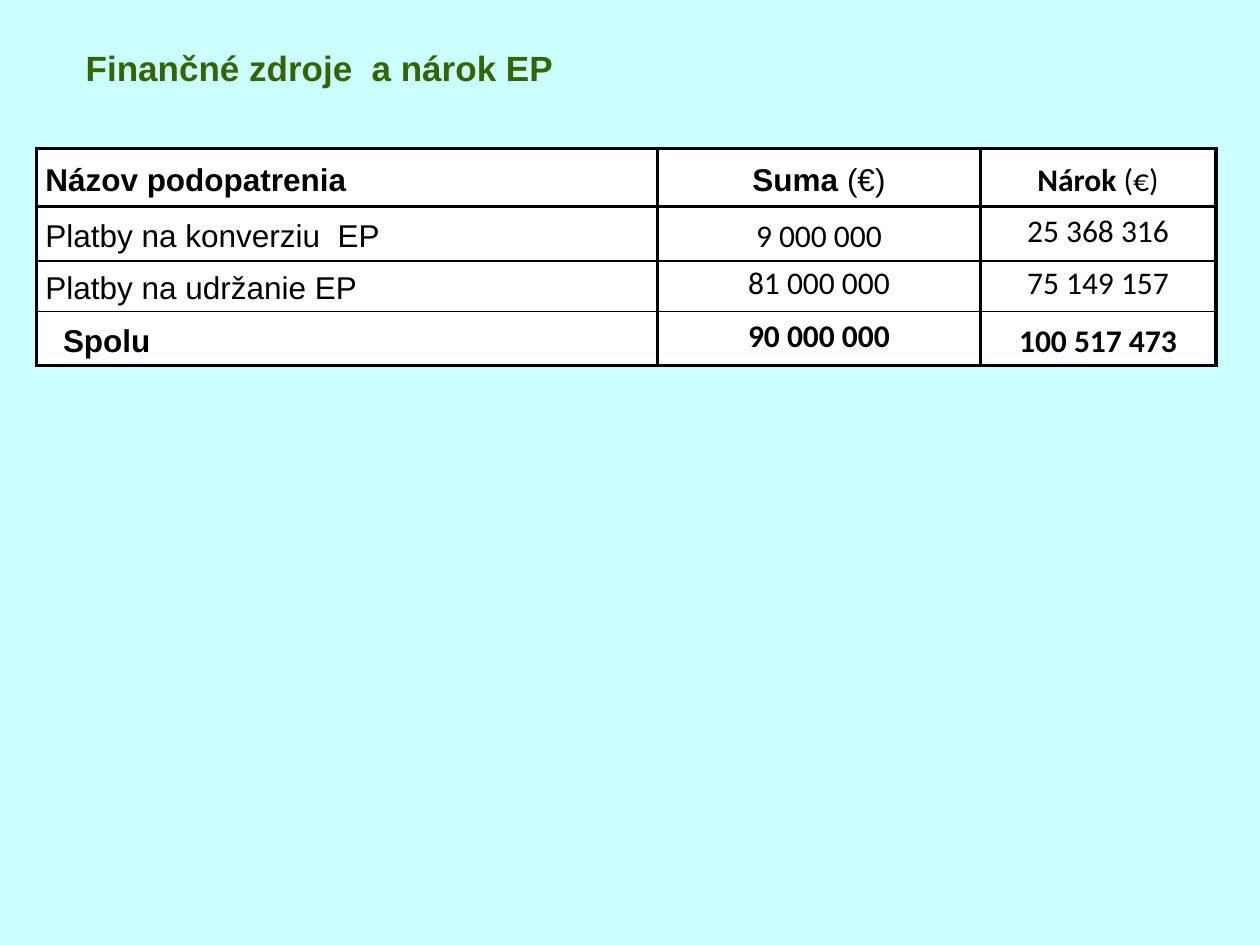
"""Build a slide with a table of payment funds and claims."""
import pptx
import pptx.util
import pptx.dml.color
import pptx.enum.text
import pptx.oxml.ns
import lxml.etree

Inches = pptx.util.Inches
Pt = pptx.util.Pt
ALIGN = pptx.enum.text.PP_ALIGN
MIDDLE = pptx.enum.text.MSO_ANCHOR.MIDDLE

TITLE = "Finančné zdroje  a nárok EP"
PLAIN = {"name": "Arial", "bold": False}
BOLD = {"name": "Arial", "bold": True}
NUM = {"name": "Calibri", "bold": False}
SUM = {"name": "Calibri", "bold": True}
ROWS = [
    [(1.15, [("Názov podopatrenia", BOLD)]),
     (1.15, [("Suma ", BOLD), ("(€)", PLAIN)]),
     (1.15, [("Nárok", SUM), (" (€)", NUM)])],
    [(1.15, [("Platby na konverziu  EP", PLAIN)]),
     (1.15, [("9 000 000", NUM)]),
     (0.75, [("25 368 316", NUM)])],
    [(1.15, [("Platby na udržanie EP", PLAIN)]),
     (0.75, [("81 000 000", NUM)]),
     (0.75, [("75 149 157", NUM)])],
    [(1.15, [("Spolu", BOLD)]),
     (0.75, [("90 000 000", SUM)]),
     (1.15, [("100 517 473", SUM)])],
]
WIDTHS = [4.93, 2.56, 1.87]
HEIGHTS = [0.46, 0.32, 0.32, 0.39]
RULES = [2.25, 2.25, 1, 1, 2.25]
INSET = {"margin_left": 0.07, "margin_right": 0.07,
         "margin_top": 0.04, "margin_bottom": 0.04}
INDENT = 0.14


def tint(text):
    return pptx.dml.color.RGBColor.from_string(text)


def style(font, form, size, color):
    for key, value in form.items():
        setattr(font, key, value)
    font.size = Pt(size)
    font.color.rgb = tint(color)


def border(cell, sides):
    props = cell._tc.get_or_add_tcPr()
    qn = pptx.oxml.ns.qn
    for spot, (side, width) in enumerate(sides.items()):
        line = lxml.etree.Element(qn("a:" + side), w=str(Pt(width)))
        fill = lxml.etree.SubElement(line, qn("a:solidFill"))
        lxml.etree.SubElement(fill, qn("a:srgbClr"), val="000000")
        props.insert(spot, line)


def head(slide):
    title = slide.shapes.title
    place = {"left": 0.58, "top": 0.24, "width": 9.02, "height": 0.67}
    for key, value in place.items():
        setattr(title, key, Inches(value))
    frame = title.text_frame
    frame.text = TITLE
    frame.vertical_anchor = MIDDLE
    para = frame.paragraphs[0]
    para.alignment = ALIGN.LEFT
    para.line_spacing = 0.75
    style(para.runs[0].font, BOLD, 20, "336600")


def fill(cell, row, col):
    space, runs = ROWS[row][col]
    cell.fill.solid()
    cell.fill.fore_color.rgb = tint("FFFFFF")
    cell.vertical_anchor = MIDDLE
    for key, value in INSET.items():
        setattr(cell, key, Inches(value))
    if row == len(ROWS) - 1 and col == 0:
        cell.margin_left = Inches(INSET["margin_left"] + INDENT)
    para = cell.text_frame.paragraphs[0]
    para.alignment = ALIGN.CENTER if col else ALIGN.LEFT
    para.line_spacing = space
    for text, form in runs:
        run = para.add_run()
        run.text = text
        style(run.font, form, 18, "000000")
    border(cell, {"lnL": 2.25, "lnR": 2.25,
                  "lnT": RULES[row], "lnB": RULES[row + 1]})


def grid(slide):
    box = [Inches(v) for v in (0.29, 1.18, sum(WIDTHS), sum(HEIGHTS))]
    table = slide.shapes.add_table(len(ROWS), len(WIDTHS), *box).table
    for col, width in enumerate(WIDTHS):
        table.columns[col].width = Inches(width)
    for row, height in enumerate(HEIGHTS):
        table.rows[row].height = Inches(height)
        for col in range(len(WIDTHS)):
            fill(table.cell(row, col), row, col)


def main():
    deck = pptx.Presentation()
    deck.slide_width = Inches(10)
    deck.slide_height = Inches(7.5)
    slide = deck.slides.add_slide(deck.slide_layouts[5])
    back = slide.background.fill
    back.solid()
    back.fore_color.rgb = tint("CCFFFF")
    head(slide)
    grid(slide)
    deck.save("out.pptx")


if __name__ == "__main__":
    main()
